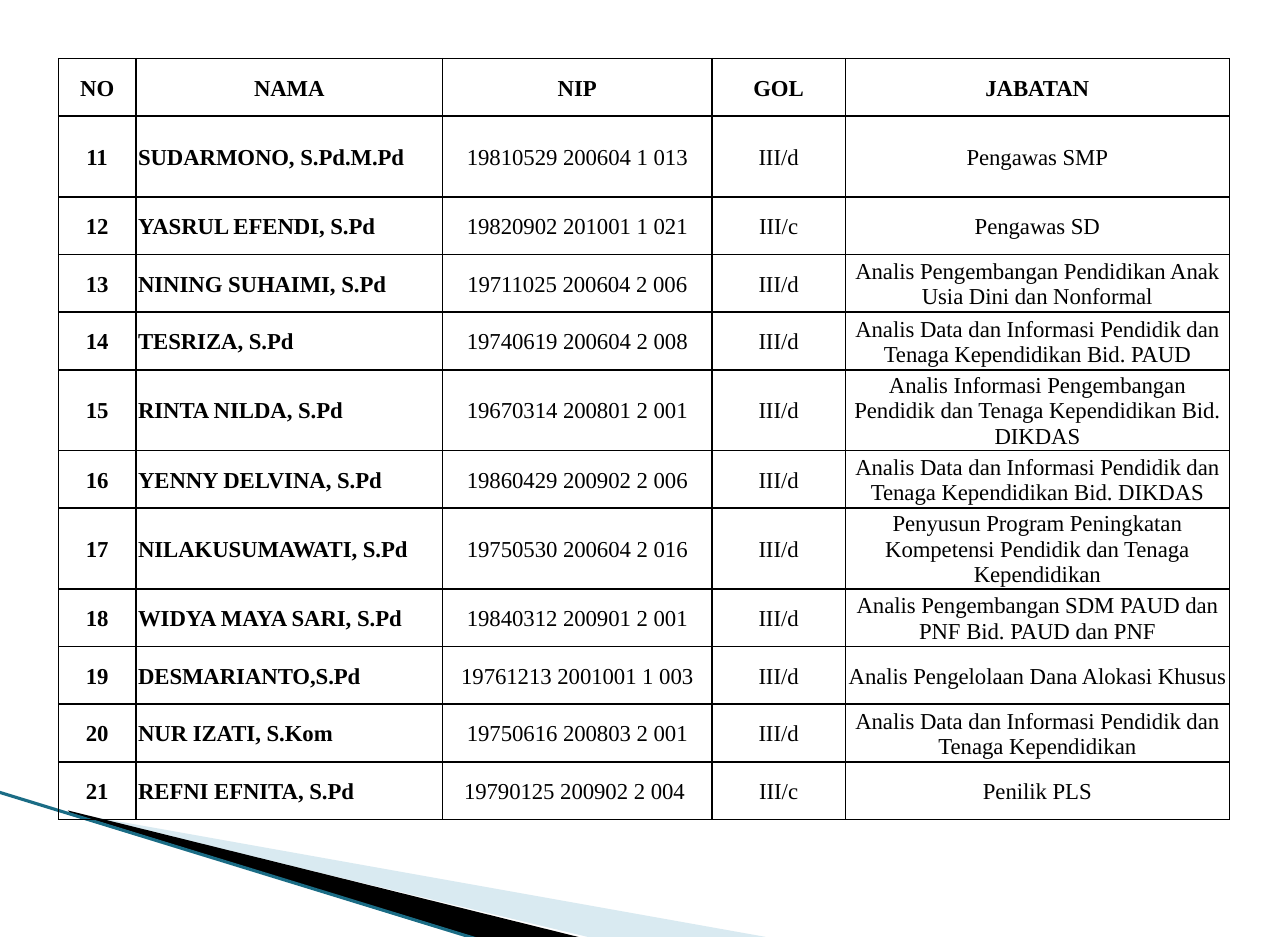
import pptx
import pptx.dml.color
import pptx.enum.shapes
import pptx.enum.text
import pptx.oxml.ns
import pptx.util
from lxml import etree

Inches = pptx.util.Inches
Pt = pptx.util.Pt
RGBColor = pptx.dml.color.RGBColor
PP_ALIGN = pptx.enum.text.PP_ALIGN
qn = pptx.oxml.ns.qn

BLACK = RGBColor(0x00, 0x00, 0x00)
PALE_BLUE = RGBColor(0xA0, 0xCB, 0xDC)
TEAL = RGBColor(0x1A, 0x6C, 0x85)
FONT = "Times New Roman"

COLUMN_WIDTHS = [0.33, 1.31, 1.15, 0.57, 1.64]
TABLE_HEIGHT = 3.25
TALL_RATIO = 1.4  # height of a tall row against a normal one
TALL_NUMBERS = {11, 15, 17}
FIRST_NUMBER = 11

HEADINGS = ["NO", "NAMA", "NIP", "GOL", "JABATAN"]
STAFF = [
    ("SUDARMONO, S.Pd.M.Pd", "19810529 200604 1 013", "III/d", "Pengawas SMP"),
    ("YASRUL EFENDI, S.Pd", "19820902 201001 1 021", "III/c", "Pengawas SD"),
    ("NINING SUHAIMI, S.Pd", "19711025 200604 2 006", "III/d",
     "Analis Pengembangan Pendidikan Anak Usia Dini dan Nonformal"),
    ("TESRIZA, S.Pd", "19740619 200604 2 008", "III/d",
     "Analis Data dan Informasi Pendidik dan Tenaga Kependidikan Bid. PAUD"),
    ("RINTA NILDA, S.Pd", "19670314 200801 2 001", "III/d",
     "Analis Informasi Pengembangan Pendidik dan Tenaga Kependidikan Bid. DIKDAS"),
    ("YENNY DELVINA, S.Pd", "19860429 200902 2 006", "III/d",
     "Analis Data dan Informasi Pendidik dan Tenaga Kependidikan Bid. DIKDAS"),
    ("NILAKUSUMAWATI, S.Pd", "19750530 200604 2 016", "III/d",
     "Penyusun Program Peningkatan Kompetensi Pendidik dan Tenaga Kependidikan"),
    ("WIDYA MAYA SARI, S.Pd", "19840312 200901 2 001", "III/d",
     "Analis Pengembangan SDM PAUD dan PNF Bid. PAUD dan PNF"),
    ("DESMARIANTO,S.Pd", "19761213 2001001 1 003", "III/d",
     "Analis Pengelolaan Dana Alokasi Khusus"),
    ("NUR IZATI, S.Kom", "19750616 200803 2 001", "III/d",
     "Analis Data dan Informasi Pendidik dan Tenaga Kependidikan"),
    ("REFNI EFNITA, S.Pd", "19790125 200902 2 004 ", "III/c", "Penilik PLS"),
]


def add_wedge(slide, points, color, opacity=100):
    builder = slide.shapes.build_freeform(
        Inches(points[0][0]), Inches(points[0][1]))
    builder.add_line_segments(
        [(Inches(x), Inches(y)) for x, y in points[1:]], close=True)
    wedge = builder.convert_to_shape()
    wedge.shadow.inherit = False
    wedge.line.fill.background()
    wedge.fill.solid()
    wedge.fill.fore_color.rgb = color
    if opacity < 100:
        fill_color = wedge.fill._xPr.find(".//" + qn("a:srgbClr"))
        etree.SubElement(fill_color, qn("a:alpha"), val=str(opacity * 1000))


def add_stripe(slide, start, end, color, width):
    stripe = slide.shapes.add_connector(
        pptx.enum.shapes.MSO_CONNECTOR.STRAIGHT,
        *[Inches(value) for value in start + end])
    stripe.line.color.rgb = color
    stripe.line.width = Pt(width)
    etree.SubElement(stripe._element.spPr, qn("a:effectLst"))


def write_text(frame, text, size=7, bold=False, align=PP_ALIGN.CENTER):
    paragraph = frame.paragraphs[0]
    paragraph.alignment = align
    run = paragraph.add_run()
    run.text = text
    run.font.name = FONT
    run.font.size = Pt(size)
    run.font.bold = bold
    run.font.color.rgb = BLACK


def style_cell(cell, border_width=0.5):
    cell.vertical_anchor = pptx.enum.text.MSO_ANCHOR.MIDDLE
    cell.margin_left = cell.margin_right = cell.margin_top = Inches(0.01)
    cell.margin_bottom = 0
    properties = cell._tc.get_or_add_tcPr()
    for side in ("a:lnL", "a:lnR", "a:lnT", "a:lnB"):
        border = etree.SubElement(
            properties, qn(side), w=str(Pt(border_width)))
        fill = etree.SubElement(border, qn("a:solidFill"))
        etree.SubElement(fill, qn("a:srgbClr"), val=str(BLACK))
    cell.fill.background()


def add_staff_table(slide):
    rows = [HEADINGS] + [
        (str(number), *person)
        for number, person in enumerate(STAFF, FIRST_NUMBER)]
    table = slide.shapes.add_table(
        len(rows), len(HEADINGS), Inches(0.25), Inches(0.25),
        Inches(sum(COLUMN_WIDTHS)), Inches(TABLE_HEIGHT)).table
    table.first_row = table.horz_banding = False
    for column, width in zip(table.columns, COLUMN_WIDTHS):
        column.width = Inches(width)

    tall_numbers = {str(number) for number in TALL_NUMBERS}
    ratios = [TALL_RATIO if row[0] in tall_numbers else 1 for row in rows]
    for table_row, ratio in zip(table.rows, ratios):
        table_row.height = Inches(TABLE_HEIGHT * ratio / sum(ratios))

    for r, row in enumerate(rows):
        for c, text in enumerate(row):
            cell = table.cell(r, c)
            is_name = r > 0 and c == 1
            style_cell(cell)
            write_text(cell.text_frame, text, bold=r == 0 or c < 2,
                       align=PP_ALIGN.LEFT if is_name else PP_ALIGN.CENTER)


def main():
    presentation = pptx.Presentation()
    presentation.slide_width = Inches(5.5)
    presentation.slide_height = Inches(4)
    slide = presentation.slides.add_slide(presentation.slide_layouts[6])

    # Corner decoration
    add_wedge(slide, [(0.3, 3.47), (3.27, 4), (2.51, 4)], PALE_BLUE, opacity=40)
    add_wedge(slide, [(0.29, 3.46), (2.51, 4.01), (2.05, 4.01), (0.3, 3.47)],
              BLACK)
    add_stripe(slide, (-0.01, 3.38), (2.04, 4.01), TEAL, 0.95)

    # Staff list
    add_staff_table(slide)

    presentation.save("out.pptx")


if __name__ == "__main__":
    main()
